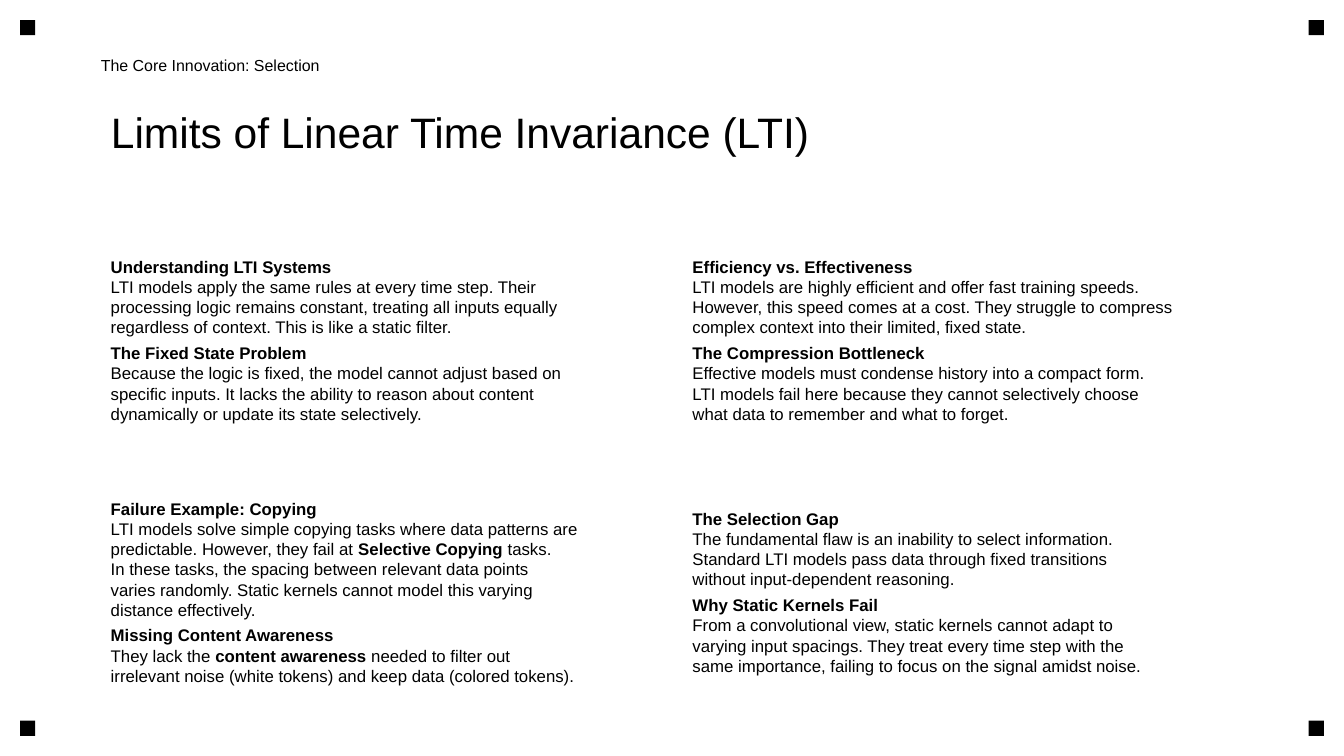
from pptx import Presentation
from pptx.dml.color import RGBColor
from pptx.enum.shapes import MSO_SHAPE
from pptx.enum.text import MSO_ANCHOR, PP_ALIGN
from pptx.util import Inches, Pt

HUES = {"ink": "000000", "page": "FFFFFF"}
PAD = (0.1, 0.05, 0.05, 0.1)

CARDS = [
    [
        ("Understanding LTI Systems", [
            "LTI models apply the same rules at every time step. Their",
            "processing logic remains constant, treating all inputs equally",
            "regardless of context. This is like a static filter."]),
        ("The Fixed State Problem", [
            "Because the logic is fixed, the model cannot adjust based on",
            "specific inputs. It lacks the ability to reason about content",
            "dynamically or update its state selectively."]),
    ],
    [
        ("Efficiency vs. Effectiveness", [
            "LTI models are highly efficient and offer fast training speeds.",
            "However, this speed comes at a cost. They struggle to compress",
            "complex context into their limited, fixed state."]),
        ("The Compression Bottleneck", [
            "Effective models must condense history into a compact form.",
            "LTI models fail here because they cannot selectively choose",
            "what data to remember and what to forget."]),
    ],
    [
        ("Failure Example: Copying", [
            "LTI models solve simple copying tasks where data patterns are",
            "predictable. However, they fail at **Selective Copying** tasks.",
            "In these tasks, the spacing between relevant data points",
            "varies randomly. Static kernels cannot model this varying",
            "distance effectively."]),
        ("Missing Content Awareness", [
            "They lack the **content awareness** needed to filter out",
            "irrelevant noise (white tokens) and keep data (colored tokens)."]),
    ],
    [
        ("The Selection Gap", [
            "The fundamental flaw is an inability to select information.",
            "Standard LTI models pass data through fixed transitions",
            "without input-dependent reasoning."]),
        ("Why Static Kernels Fail", [
            "From a convolutional view, static kernels cannot adapt to",
            "varying input spacings. They treat every time step with the",
            "same importance, failing to focus on the signal amidst noise."]),
    ],
]


class Deck:
    """Holds the style and the current slide, with a method for each element."""

    def __init__(self):
        self.show = Presentation()
        self.show.slide_width = Inches(13.33)
        self.show.slide_height = Inches(7.5)
        self.slide = self.show.slides.add_slide(self.show.slide_layouts[5])
        back = self.slide.background.fill
        back.solid()
        back.fore_color.rgb = self.hue("page")

    def hue(self, name):
        return RGBColor.from_string(HUES[name])

    def frame(self, shape, pad, anchor):
        frame = shape.text_frame
        frame.word_wrap = True
        frame.vertical_anchor = anchor
        (frame.margin_left, frame.margin_top,
         frame.margin_right, frame.margin_bottom) = map(Inches, pad)
        return frame

    def style(self, para, size, bold=None):
        para.alignment = PP_ALIGN.LEFT
        para.font.name = "Arial"
        para.font.size = Pt(size)
        para.font.bold = bold
        para.font.color.rgb = self.hue("ink")

    def mark(self, left, top):
        box = self.slide.shapes.add_shape(
            MSO_SHAPE.RECTANGLE, *map(Inches, (left, top, 0.15, 0.15)))
        box.shadow.inherit = False
        box.fill.solid()
        box.fill.fore_color.rgb = self.hue("ink")
        box.line.fill.background()

    def title(self, text):
        head = self.slide.shapes.title
        head.left, head.top, head.width, head.height = map(Inches, (1, 1, 11.33, 1))
        frame = self.frame(head, PAD, MSO_ANCHOR.TOP)
        frame.text = text
        self.style(frame.paragraphs[0], 30.4)

    def box(self, spot, pad):
        shape = self.slide.shapes.add_textbox(*map(Inches, spot))
        return self.frame(shape, pad, MSO_ANCHOR.MIDDLE)

    def label(self, text):
        frame = self.box((1, 0.4, 6, 0.5), (0, 0, 0, 0))
        frame.text = text
        self.style(frame.paragraphs[0], 11.4)

    def card(self, left, top, parts):
        frame = self.box((left, top, 5.56, 2.2), PAD)
        para = frame.paragraphs[0]
        for num, (head, lines) in enumerate(parts):
            if num:
                para.space_after = Pt(4)
                para = frame.add_paragraph()
            para.text = head
            self.style(para, 12, True)
            for line in lines:
                para = frame.add_paragraph()
                self.style(para, 12)
                for step, piece in enumerate(line.split("**")):
                    run = para.add_run()
                    run.text = piece
                    if step % 2:
                        run.font.bold = True


def main():
    deck = Deck()
    for top in (0.2, 7.15):
        for left in (0.2, 12.98):
            deck.mark(left, top)
    deck.title("Limits of Linear Time Invariance (LTI)")
    for num, parts in enumerate(CARDS):
        row, col = divmod(num, 2)
        deck.card(1 + 5.77 * col, 2.3 + 2.5 * row, parts)
    deck.label("The Core Innovation: Selection")
    deck.show.save("out.pptx")


if __name__ == "__main__":
    main()
